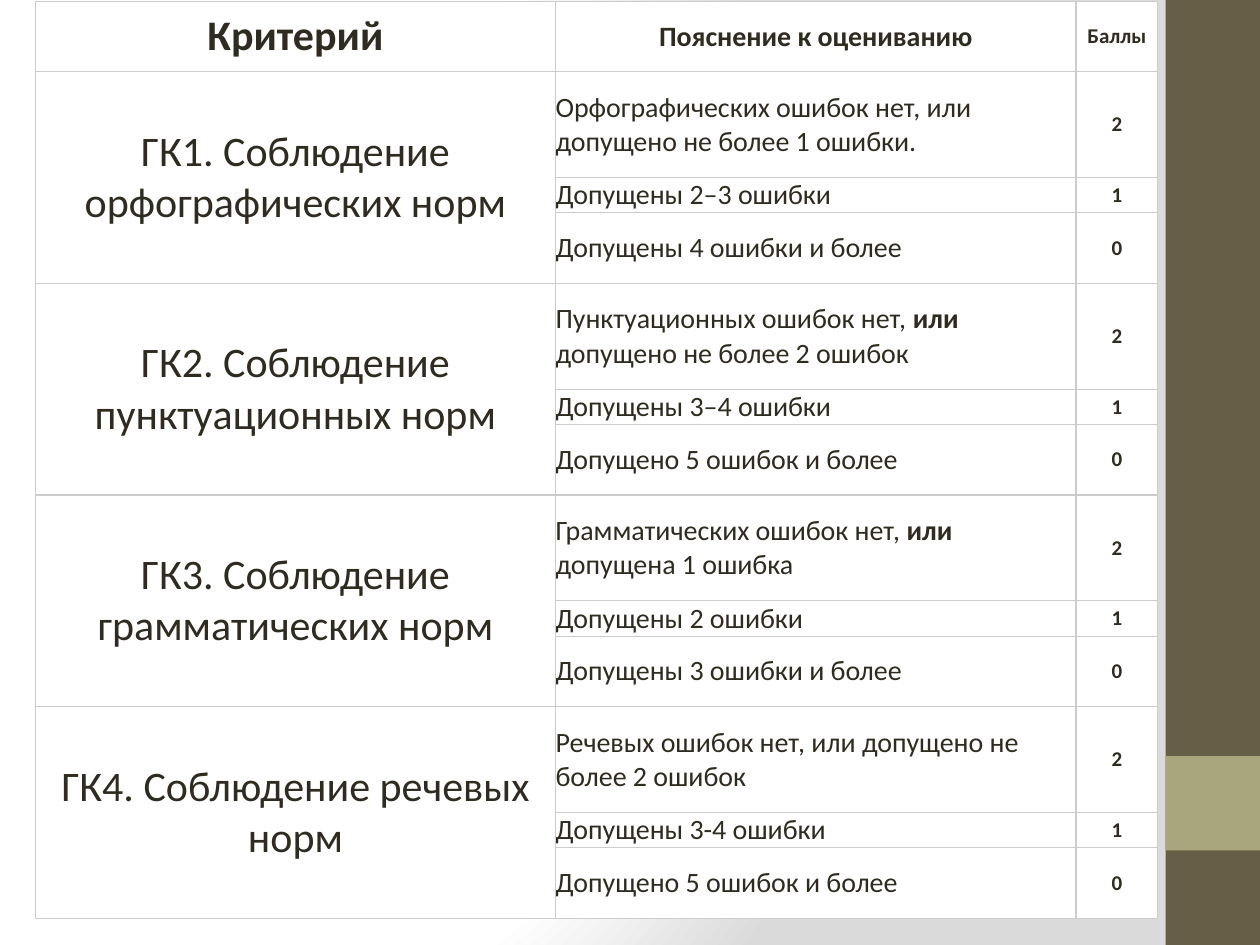
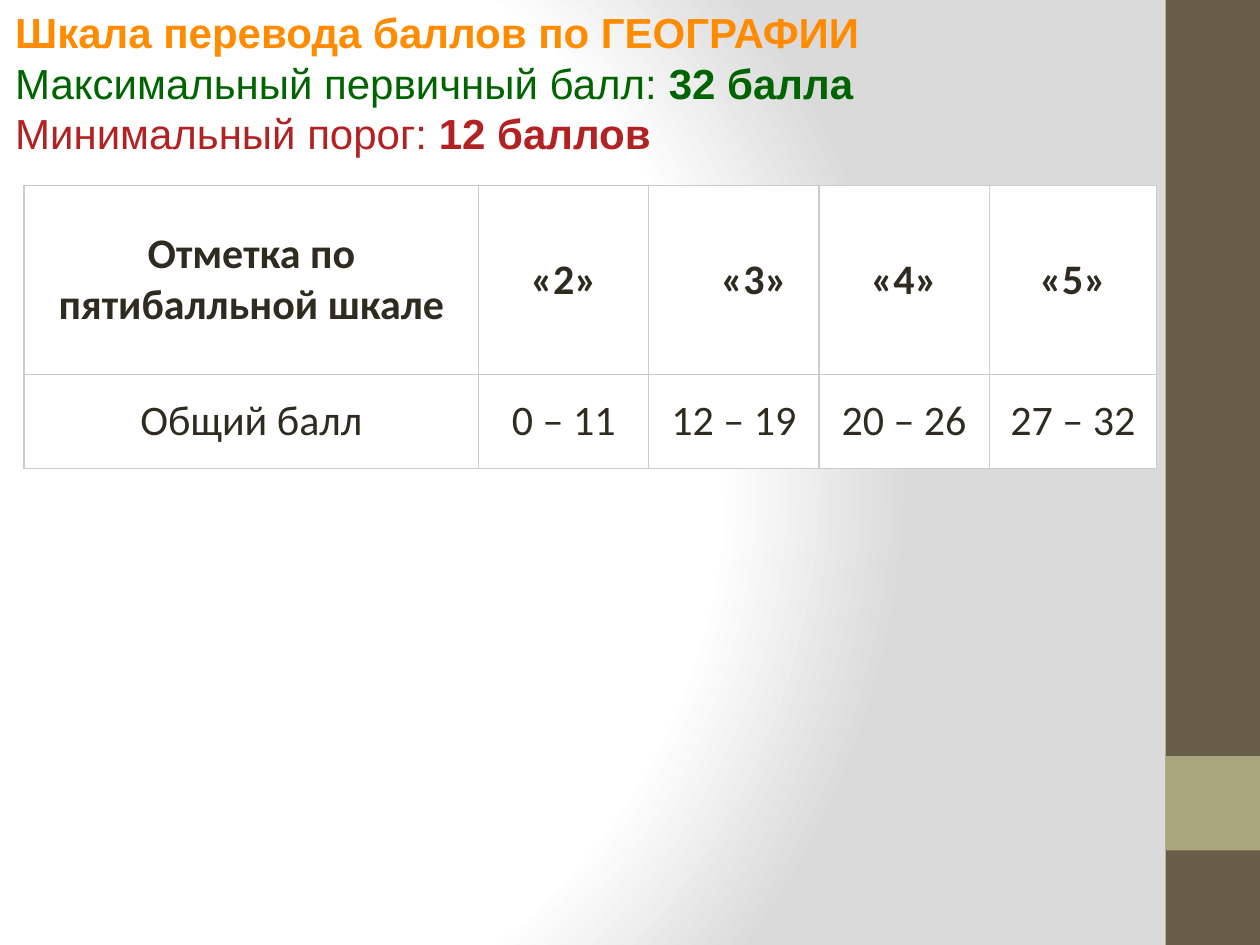
from typing import NamedTuple

from lxml import etree
from pptx import Presentation
from pptx.dml.color import RGBColor as Rgb
from pptx.enum.shapes import MSO_SHAPE as Shape
from pptx.enum.text import MSO_ANCHOR as Anchor, MSO_AUTO_SIZE as Fit, PP_ALIGN as Align
from pptx.oxml import parse_xml
from pptx.oxml.ns import nsdecls, qn
from pptx.util import Inches, Pt

COLORS = {
    "white": "FFFFFF", "fade": "DADADA", "line": "CCCCCC", "ink": "2F2B20",
    "band": "675E47", "block": "A9A57C",
    "orange": "FF8C00", "green": "006400", "red": "B22222",
}


class Band(NamedTuple):
    top: float
    height: float
    color: str


class Cell(NamedTuple):
    text: str
    size: int
    bold: bool = False
    align: Align = Align.CENTER
    rows: int = 1
    indent: float = 0


class Grid(NamedTuple):
    left: float
    top: float
    cols: list[float]
    rows: list[float]
    cells: list[list[Cell | None]]


BANDS = [Band(0, 7.5, "band"), Band(6, 0.75, "block")]

# Asterisks enclose bold words.
NORMS = [
    ("ГК1. Соблюдение орфографических норм",
     ["Орфографических ошибок нет, или допущено не более 1 ошибки.",
      "Допущены 2–3 ошибки", "Допущены 4 ошибки и более"]),
    ("ГК2. Соблюдение пунктуационных норм",
     ["Пунктуационных ошибок нет, *или* допущено не более 2 ошибок",
      "Допущены 3–4 ошибки", "Допущено 5 ошибок и более"]),
    ("ГК3. Соблюдение грамматических норм",
     ["Грамматических ошибок нет, *или* допущена 1 ошибка",
      "Допущены 2 ошибки", "Допущены 3 ошибки и более"]),
    ("ГК4. Соблюдение речевых норм",
     ["Речевых ошибок нет, или допущено не более 2 ошибок",
      "Допущены 3-4 ошибки", "Допущено 5 ошибок и более"]),
]
MARKS = [("«2»", "0 – 11"), ("«3»", "12 – 19"), ("«4»", "20 – 26"), ("«5»", "27 – 32")]
TITLE = [
    ("*Шкала перевода баллов по ГЕОГРАФИИ*", "orange"),
    ("Максимальный первичный балл: *32 балла*", "green"),
    ("Минимальный порог: *12 баллов*", "red"),
]


def rgb(name: str) -> Rgb:
    return Rgb.from_string(COLORS[name])


def set_back(master) -> None:
    """Give the master a circular fade from white to grey."""
    fill = master.background.fill
    fill.solid()
    stops = "".join(
        f'<a:gs pos="{pos}000"><a:srgbClr val="{COLORS[name]}"/></a:gs>'
        for pos, name in [(0, "white"), (75, "white"), (100, "fade")])
    grad = parse_xml(
        f'<a:gradFill {nsdecls("a")} rotWithShape="1"><a:gsLst>{stops}</a:gsLst>'
        '<a:path path="circle"><a:fillToRect l="20000" t="50000" r="100000" b="50000"/>'
        '</a:path></a:gradFill>')
    solid = next(master.element.iter(qn("p:bgPr"))).find(qn("a:solidFill"))
    solid.getparent().replace(solid, grad)


def add_bands(slide) -> None:
    for band in BANDS:
        box = slide.shapes.add_shape(
            Shape.RECTANGLE, Inches(9.25), Inches(band.top), Inches(0.75), Inches(band.height))
        box.shadow.inherit = False
        box.fill.solid()
        box.fill.fore_color.rgb = rgb(band.color)
        box.line.fill.background()


def write(para, text: str, size: int, face: str, color: str, bold: bool = False) -> None:
    """Fill a paragraph; asterisks switch bold on and off."""
    for i, part in enumerate(text.split("*")):
        if part:
            run = para.add_run()
            run.text = part
            run.font.size = Pt(size)
            run.font.name = face
            run.font.bold = bold or i % 2 == 1
            run.font.color.rgb = rgb(color)


def add_edges(cell) -> None:
    props = cell._tc.get_or_add_tcPr()
    for i, side in enumerate(("lnL", "lnR", "lnT", "lnB")):
        edge = etree.Element(qn(f"a:{side}"), w=str(Pt(0.75)))
        fill = etree.SubElement(edge, qn("a:solidFill"))
        etree.SubElement(fill, qn("a:srgbClr"), val=COLORS["line"])
        props.insert(i, edge)


def fill_cell(cell, item: Cell) -> None:
    cell.vertical_anchor = Anchor.MIDDLE
    frame = cell.text_frame
    for i, line in enumerate(item.text.split("\n")):
        para = frame.add_paragraph() if i else frame.paragraphs[0]
        para.alignment = item.align
        if item.indent:
            props = para._p.get_or_add_pPr()
            props.set("marL", str(Inches(item.indent)))
            props.set("indent", "0")
        write(para, line, item.size, "Calibri", "ink", item.bold)


def add_grid(slide, grid: Grid) -> None:
    table = slide.shapes.add_table(
        len(grid.rows), len(grid.cols), Inches(grid.left), Inches(grid.top),
        Inches(sum(grid.cols)), Inches(sum(grid.rows))).table
    table.first_row = table.horz_banding = False
    for col, width in zip(table.columns, grid.cols):
        col.width = Inches(width)
    for row, height in zip(table.rows, grid.rows):
        row.height = Inches(height)
    for r, line in enumerate(grid.cells):
        for c, item in enumerate(line):
            cell = table.cell(r, c)
            cell.margin_left = cell.margin_right = cell.margin_top = cell.margin_bottom = 0
            cell.fill.solid()
            cell.fill.fore_color.rgb = rgb("white")
            add_edges(cell)
            if item:
                fill_cell(cell, item)
                if item.rows > 1:
                    cell.merge(table.cell(r + item.rows - 1, c))


def norm_grid() -> Grid:
    cells = [[Cell("Критерий", 24, True), Cell("Пояснение к оцениванию", 16, True),
              Cell("Баллы", 12, True)]]
    for norm, rules in NORMS:
        for i, rule in enumerate(rules):
            head = None if i else Cell(norm, 24, rows=len(rules))
            cells.append([head, Cell(rule, 16, align=Align.LEFT), Cell(str(2 - i), 12, True)])
    return Grid(0.28, 0.01, [4.13, 4.13, 0.65], [0.56] + [0.84, 0.28, 0.56] * len(NORMS), cells)


def mark_grid() -> Grid:
    head = [Cell("Отметка по\nпятибалльной шкале", 24, True)]
    body = [Cell("Общий балл", 24)]
    for mark, span in MARKS:
        head.append(Cell(mark, 24, True, indent=0.32 if mark == "«3»" else 0))
        body.append(Cell(span, 24))
    return Grid(0.19, 1.47, [3.61, 1.35, 1.35, 1.35, 1.33], [1.5, 0.75], [head, body])


def set_title(slide) -> None:
    title = slide.shapes.title
    title.left, title.top = Inches(0.02), Inches(0)
    title.width, title.height = Inches(9.33), Inches(1.31)
    frame = title.text_frame
    frame.word_wrap = True
    frame.auto_size = Fit.NONE
    frame.vertical_anchor = Anchor.MIDDLE
    for i, (text, color) in enumerate(TITLE):
        para = frame.add_paragraph() if i else frame.paragraphs[0]
        para.alignment = Align.LEFT
        write(para, text, 24, "Arial", color)


def main() -> None:
    deck = Presentation()
    deck.slide_width, deck.slide_height = Inches(10), Inches(7.5)
    set_back(deck.slide_master)
    only, blank = deck.slide_layouts[5], deck.slide_layouts[6]

    norms = deck.slides.add_slide(blank)
    add_bands(norms)
    add_grid(norms, norm_grid())

    scale = deck.slides.add_slide(only)
    add_bands(scale)
    add_grid(scale, mark_grid())
    set_title(scale)

    deck.save("out.pptx")


if __name__ == "__main__":
    main()
